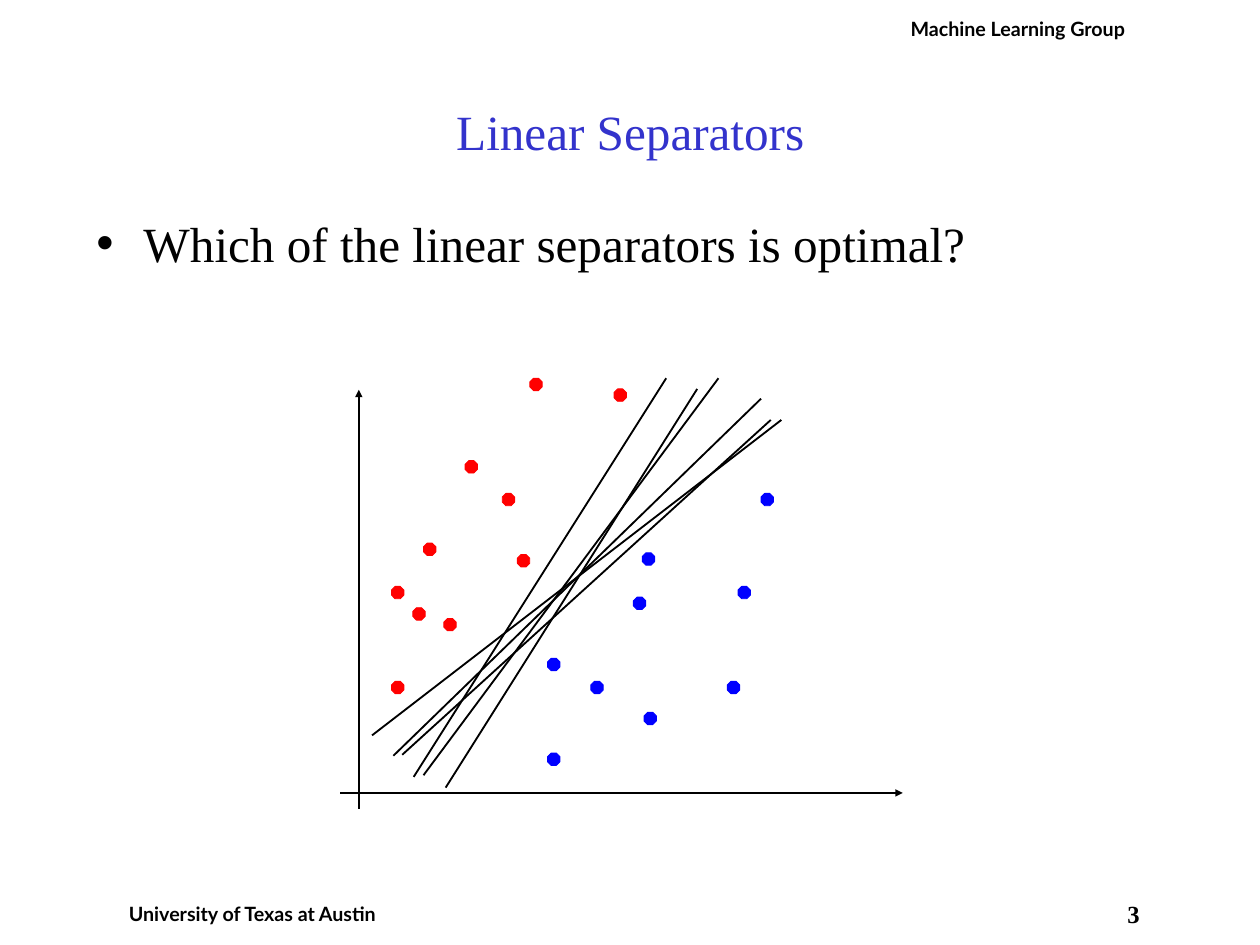
"""Build the Linear Separators slide: two point classes and candidate lines."""
from dataclasses import dataclass

from lxml import etree
from pptx import Presentation
from pptx import util as u
from pptx.dml.color import RGBColor
from pptx.enum import shapes, text
from pptx.oxml.ns import qn

INK, RED, BLUE, TITLE, WHITE = "000000", "FF0000", "0000FF", "3333CC", "FFFFFF"
SERIF, SANS = "Times New Roman", "Lato"
DOT = 10


@dataclass
class Label:
    words: str
    box: tuple
    size: float
    font: str
    inset: float


@dataclass
class Line:
    ends: tuple
    width: float = 1.5
    arrow: bool = False


@dataclass
class Group:
    hue: str
    spots: list


LABELS = [
    Label("3", (904.3, 730.8, 33.8, 37.2), 20, SERIF, 0),
    Label("University of Texas at Austin", (85.7, 728, 239, 49), 16, SANS, 5),
    Label("Machine Learning Group", (725, 8.6, 204.5, 49), 16, SANS, 5),
]
AXES = [
    Line((291.6, 657.4, 291.6, 316.8), 2, True),
    Line((276.5, 644.4, 733.7, 644.4), 2, True),
]
CUTS = [
    Line((326.9, 613.4, 626.4, 341.3)),
    Line((344.2, 630, 583.9, 307.4)),
    Line((302.4, 597.6, 635, 341.3)),
    Line((362.2, 640.1, 566.6, 316.1)),
    Line((336.2, 631.4, 541.4, 307.4)),
    Line((319.7, 614.2, 618.5, 324)),
]
GROUPS = [
    Group(RED, [(408.2, 401), (344.2, 441.4), (360.7, 502.6), (318.2, 553.7),
                (378, 374.4), (318.2, 476.6), (335.5, 493.9), (420.5, 450.7),
                (430.6, 307.4), (499, 316.1)]),
    Group(BLUE, [(522, 449.3), (480.2, 553.7), (591.1, 553.7), (445, 612),
                 (514.8, 485.3), (445, 535), (523.4, 578.9), (599.8, 476.6),
                 (618.5, 401)]),
]


def paint(color, code: str) -> None:
    color.rgb = RGBColor.from_string(code)


def apply(item, style: dict) -> None:
    for name, value in style.items():
        setattr(item, name, value)


def write(shape, words: str, size: float, font: str, hue: str, bold: bool,
          align, anchor, pads: tuple):
    frame = shape.text_frame
    frame.text = words
    side, edge = map(u.Pt, pads)
    apply(frame, {"word_wrap": True, "auto_size": text.MSO_AUTO_SIZE.NONE,
                  "vertical_anchor": anchor,
                  "margin_left": side, "margin_right": side,
                  "margin_top": edge, "margin_bottom": edge})
    para = frame.paragraphs[0]
    para.alignment = align
    face = para.runs[0].font
    apply(face, {"size": u.Pt(size), "name": font, "bold": bold})
    paint(face.color, hue)
    return para


def place(shape, box: tuple) -> None:
    names = ("left", "top", "width", "height")
    apply(shape, dict(zip(names, map(u.Pt, box))))


def add_form(slide, kind, box: tuple, hue: str):
    form = slide.shapes.add_shape(kind, *map(u.Pt, box))
    form.shadow.inherit = False
    form.fill.solid()
    paint(form.fill.fore_color, hue)
    return form


def add_label(slide, label: Label) -> None:
    form = add_form(slide, shapes.MSO_SHAPE.RECTANGLE, label.box, WHITE)
    form.line.fill.background()
    write(form, label.words, label.size, label.font, INK, True,
          text.PP_ALIGN.CENTER, text.MSO_ANCHOR.TOP, (label.inset, label.inset))


def add_line(slide, line: Line) -> None:
    link = slide.shapes.add_connector(shapes.MSO_CONNECTOR.STRAIGHT,
                                      *map(u.Pt, line.ends))
    link.line.width = u.Pt(line.width)
    paint(link.line.color, INK)
    if line.arrow:
        stroke = link.line._get_or_add_ln()
        etree.SubElement(stroke, qn("a:tailEnd"), type="triangle")
    etree.SubElement(link._element.spPr, qn("a:effectLst"))


def add_dots(slide, group: Group) -> None:
    for spot in group.spots:
        dot = add_form(slide, shapes.MSO_SHAPE.OCTAGON, (*spot, DOT, DOT), group.hue)
        dot.adjustments[0] = 0.293
        dot.line.width = u.Pt(0.75)
        paint(dot.line.color, group.hue)


def main() -> None:
    deck = Presentation()
    apply(deck, {"slide_width": u.Pt(1024), "slide_height": u.Pt(768)})
    slide = deck.slides.add_slide(deck.slide_layouts[1])
    title, body = slide.placeholders
    place(title, (77, 42.5, 870.5, 128))
    write(title, "Linear Separators", 40, SERIF, TITLE, False,
          text.PP_ALIGN.CENTER, text.MSO_ANCHOR.MIDDLE, (10, 5))
    place(body, (68.4, 168.5, 921.6, 563))
    para = write(body, "Which of the linear separators is optimal?", 40, SERIF,
                 INK, False, text.PP_ALIGN.LEFT, text.MSO_ANCHOR.TOP, (10, 5))
    dent = u.Pt(38.2)
    props = para._p.get_or_add_pPr()
    props.set("marL", str(dent))
    props.set("indent", str(-dent))
    for label in LABELS:
        add_label(slide, label)
    for line in AXES + CUTS:
        add_line(slide, line)
    for group in GROUPS:
        add_dots(slide, group)
    deck.save("out.pptx")


if __name__ == "__main__":
    main()
